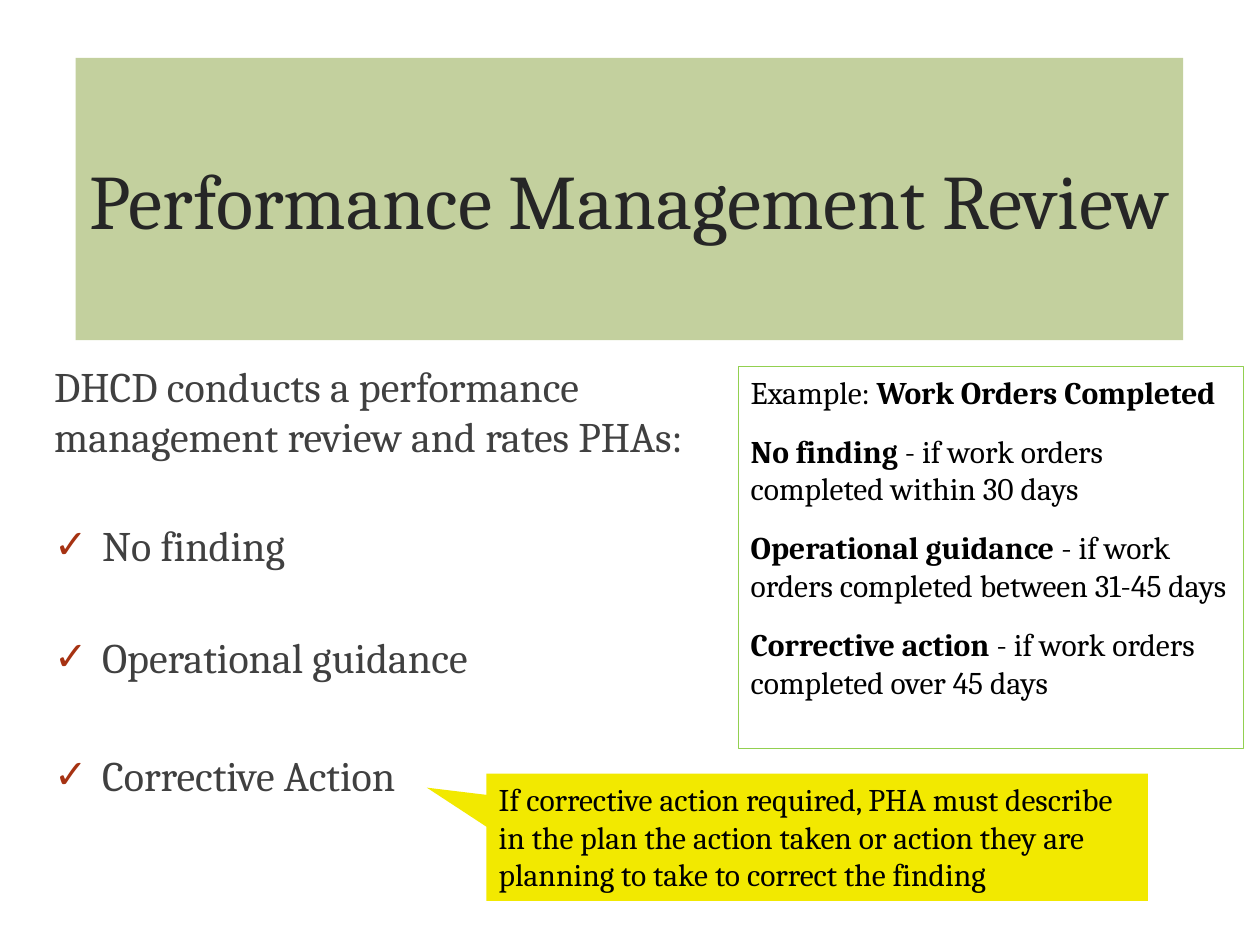
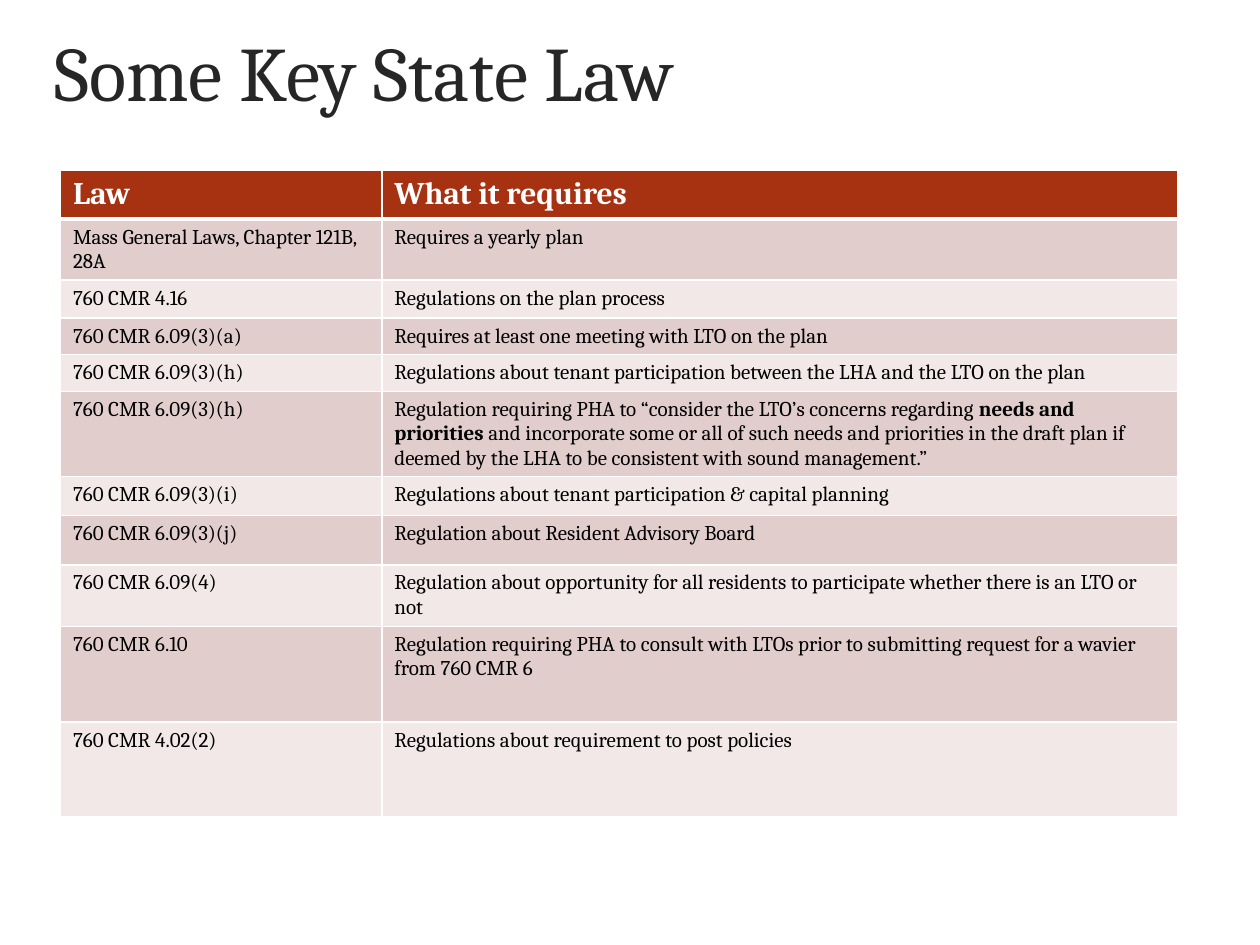
from lxml.etree import SubElement
from pptx import Presentation
from pptx.dml.color import RGBColor
from pptx.enum.shapes import MSO_SHAPE as Shape
from pptx.enum.text import MSO_ANCHOR as Anchor, MSO_AUTO_SIZE as AutoSize, PP_ALIGN as Align
from pptx.oxml.ns import qn
from pptx.util import Inches, Pt

FONT = "Cambria"
TITLE_INK, BODY_INK, BLACK, WHITE = "262626", "404040", "000000", "FFFFFF"
BRICK, SAGE, YELLOW, GREEN = "A63212", "C3D09E", "F2E900", "92D050"
BANDS = ("E1CECC", "F1E8E7")
COLUMNS, ROWS = 100, 75
UNIT = Inches(0.1)

RATINGS = [("No finding", 33.5), ("Operational guidance", 35), ("Corrective Action", 38.5)]
EXAMPLES = [
    "Example: *Work Orders Completed",
    "*No finding *- if work orders completed within 30 days",
    "*Operational guidance *- if work orders completed between 31-45 days",
    "*Corrective action *- if work orders completed over 45 days",
]
LAWS = [
    (3.8, "*Law", "*What it requires"),
    (4.8, "Mass General Laws, Chapter 121B, 28A", "Requires a yearly plan"),
    (3.0, "760 CMR 4.16", "Regulations on the plan process"),
    (2.9, "760 CMR 6.09(3)(a)", "Requires at least one meeting with LTO on the plan"),
    (2.9, "760 CMR 6.09(3)(h)",
     "Regulations about tenant participation between the LHA and the LTO on the plan"),
    (6.7, "760 CMR 6.09(3)(h)",
     "Regulation requiring PHA to “consider the LTO’s concerns regarding *needs and priorities "
     "*and incorporate some or all of such needs and priorities in the draft plan if deemed "
     "by the LHA to be consistent with sound management.”"),
    (3.1, "760 CMR 6.09(3)(i)", "Regulations about tenant participation & capital planning"),
    (3.9, "760 CMR 6.09(3)(j)", "Regulation about Resident Advisory Board"),
    (4.9, "760 CMR 6.09(4)",
     "Regulation about opportunity for all residents to participate whether there is an LTO or not"),
    (7.6, "760 CMR 6.10",
     "Regulation requiring PHA to consult with LTOs prior to submitting request "
     "for a wavier from 760 CMR 6"),
    (7.5, "760 CMR 4.02(2)", "Regulations about requirement to post policies"),
]


def color(value):
    """Turn a hex string into a colour."""
    return RGBColor.from_string(value)


def grid(*units):
    """Turn grid columns or rows into lengths."""
    return [int(unit * UNIT) for unit in units]


def paint(target, value):
    """Fill a shape or cell with one solid colour."""
    target.fill.solid()
    target.fill.fore_color.rgb = color(value)


def write(para, text, size, ink):
    """Write text into a paragraph, switching bold at each asterisk."""
    for index, part in enumerate(text.split("*")):
        if part:
            span = para.add_run()
            span.text = part
            span.font.name, span.font.size = FONT, Pt(size)
            span.font.bold = index % 2 == 1
            span.font.color.rgb = color(ink)


def write_lines(frame, lines, size, ink):
    """Write one paragraph per line and return the paragraphs."""
    paras = [frame.paragraphs[0]] + [frame.add_paragraph() for _ in lines[1:]]
    for para, text in zip(paras, lines):
        write(para, text, size, ink)
    return paras


def move(shape, *place):
    """Put a placeholder at its place on the grid."""
    shape.left, shape.top, shape.width, shape.height = grid(*place)
    shape.text_frame.word_wrap = True
    shape.text_frame.auto_size = AutoSize.NONE


def set_title(page, text, align, *place):
    """Place and format the slide title."""
    title = page.shapes.title
    move(title, *place)
    title.text_frame.vertical_anchor = Anchor.MIDDLE
    para = title.text_frame.paragraphs[0]
    para.alignment = align
    write(para, text, 44, TITLE_INK)
    return title


def set_bullet(para, mark=None):
    """Give a paragraph a hanging bullet, or none."""
    properties = para._p.get_or_add_pPr()
    indent = Inches(0.38) if mark else 0
    properties.set("marL", str(indent))
    properties.set("indent", str(-indent))
    if not mark:
        SubElement(properties, qn("a:buNone"))
        return
    SubElement(SubElement(properties, qn("a:buClr")), qn("a:srgbClr"), val=BRICK)
    SubElement(properties, qn("a:buSzPct"), val="95000")
    SubElement(properties, qn("a:buChar"), char=mark)


def add_ratings(page):
    """Fill the body placeholder with the introduction and the ratings."""
    body = page.placeholders[1]
    move(body, 3.3, 28.1, 57, 36.3)
    intro = "DHCD conducts a performance management review and rates PHAs:"
    lines = [intro] + [rating for rating, _ in RATINGS]
    paras = write_lines(body.text_frame, lines, 24, BODY_INK)
    set_bullet(paras[0])
    paras[0].space_before = Pt(0)
    for para, (_, gap) in zip(paras[1:], RATINGS):
        set_bullet(para, "✓")
        para.space_before = Pt(gap)


def add_box(page, kind, lines, place, fill=None, line=None, gap=0):
    """Add a shape that holds top-left text."""
    box = page.shapes.add_shape(kind, *grid(*place))
    box.shadow.inherit = False
    if fill:
        paint(box, fill)
    else:
        box.fill.background()
    if line:
        box.line.color.rgb, box.line.width = color(line), Pt(0.75)
    else:
        box.line.fill.background()
    frame = box.text_frame
    frame.word_wrap, frame.vertical_anchor = True, Anchor.TOP
    for para in write_lines(frame, lines, 18, BLACK):
        para.alignment, para.space_after = Align.LEFT, Pt(gap)
    return box


def set_borders(cell, row):
    """Draw white cell borders, thick between the header and the rows."""
    properties = cell._tc.get_or_add_tcPr()
    thick = {"lnB": 0, "lnT": 1}
    for side in ("lnL", "lnR", "lnT", "lnB"):
        width = Pt(3 if thick.get(side) == row else 1)
        edge = SubElement(properties, qn(f"a:{side}"), w=str(width))
        SubElement(SubElement(edge, qn("a:solidFill")), qn("a:srgbClr"), val=WHITE)


def add_law_table(page):
    """Add the table of laws and what they require."""
    widths = grid(25.5, 63.2)
    heights = grid(*[law[0] for law in LAWS])
    table = page.shapes.add_table(
        len(LAWS), 2, *grid(4.8, 13.5), sum(widths), sum(heights)).table
    table.horz_banding = False
    for column, width in zip(table.columns, widths):
        column.width = width
    for row, (_, *texts) in enumerate(LAWS):
        table.rows[row].height = heights[row]
        size, ink, fill = (12, BLACK, BANDS[(row - 1) % 2]) if row else (18, WHITE, BRICK)
        for column, text in enumerate(texts):
            cell = table.cell(row, column)
            set_borders(cell, row)
            paint(cell, fill)
            write(cell.text_frame.paragraphs[0], text, size, ink)


def build_review(deck):
    """Build the performance review slide."""
    page = deck.slides.add_slide(deck.slide_layouts[1])
    title = set_title(page, "Performance Management Review", Align.CENTER, 6, 4.6, 87.9, 22.4)
    paint(title, SAGE)
    title.text_frame.margin_left = title.text_frame.margin_right = Inches(0.05)
    add_ratings(page)
    note = ("If corrective action required, PHA must describe in the plan the action taken "
            "or action they are planning to take to correct the finding")
    callout = add_box(page, Shape.RECTANGULAR_CALLOUT, [note], (38.6, 61.4, 52.5, 10.1), fill=YELLOW)
    callout.adjustments[0], callout.adjustments[1] = -0.59, -0.39
    add_box(page, Shape.RECTANGLE, EXAMPLES, (58.6, 29.1, 40.1, 30.3), line=GREEN, gap=12)


def build_laws(deck):
    """Build the state law slide."""
    page = deck.slides.add_slide(deck.slide_layouts[5])
    set_title(page, "Some Key State Law", Align.LEFT, 3.3, 1.2, 87.9, 8.8)
    add_law_table(page)


def main():
    """Build and save the deck."""
    deck = Presentation()
    deck.slide_width, deck.slide_height = grid(COLUMNS, ROWS)
    build_review(deck)
    build_laws(deck)
    deck.save("out.pptx")


if __name__ == "__main__":
    main()
